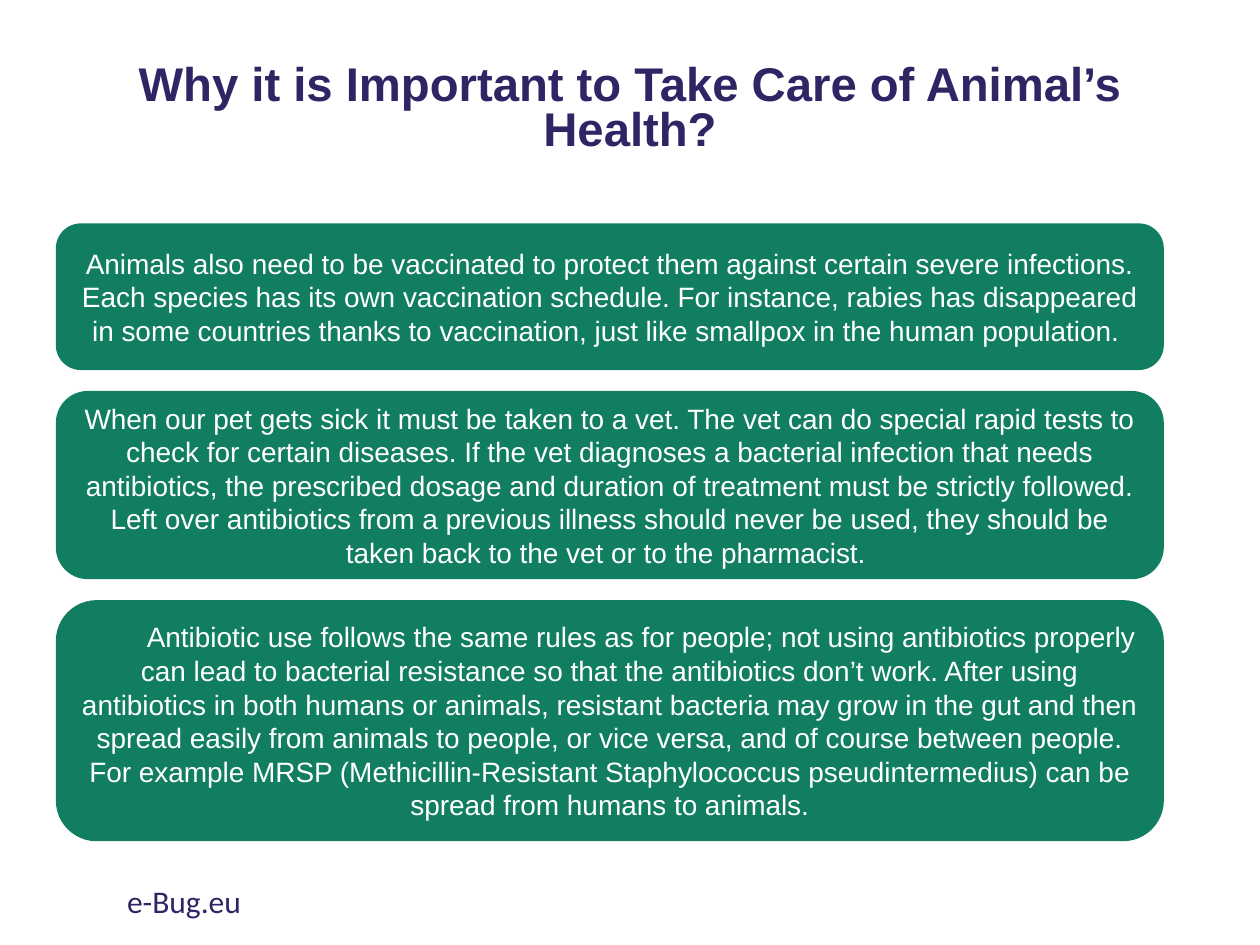
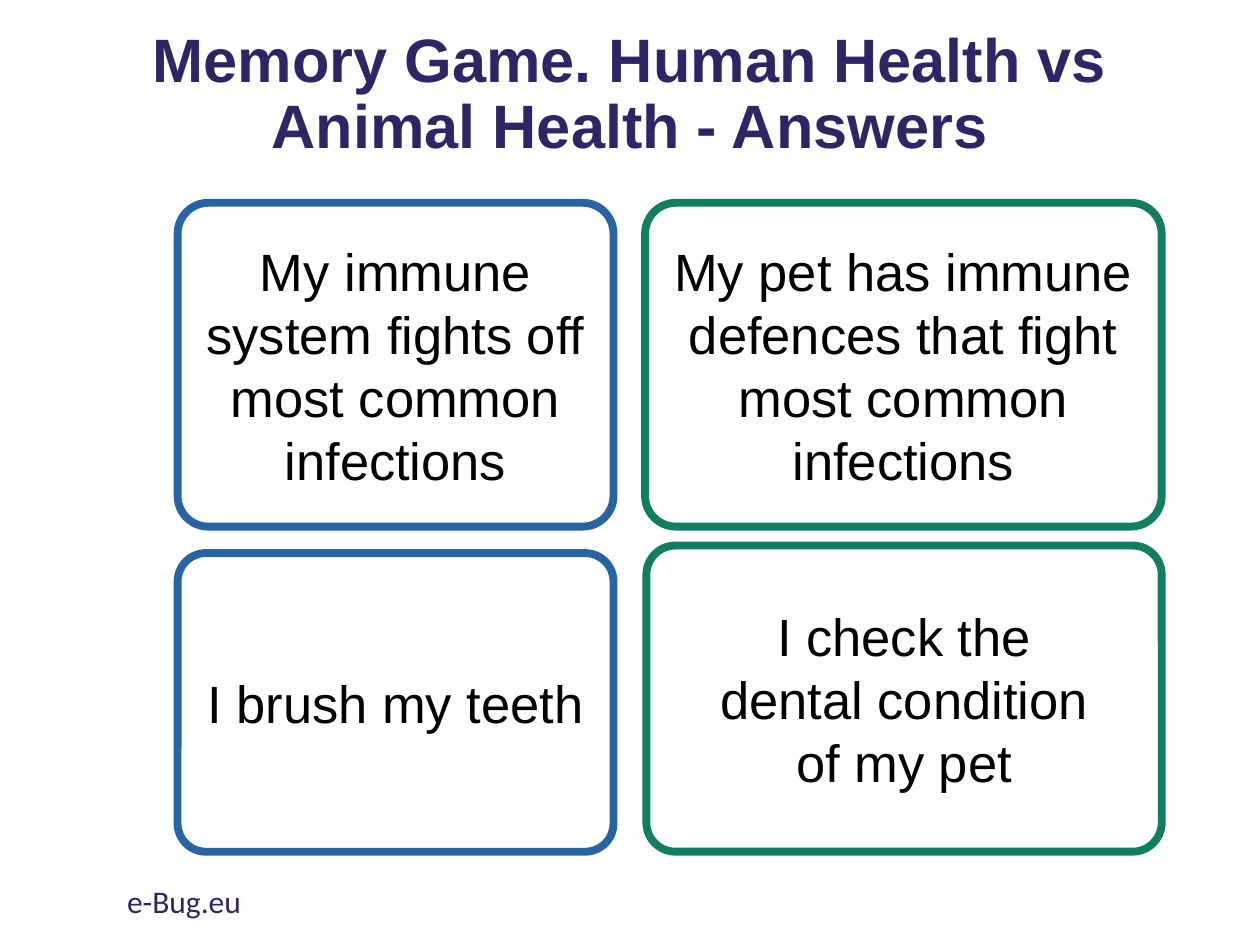
from pptx import Presentation
from pptx import util as u
from pptx.dml.color import RGBColor
from pptx.enum import shapes, text

NAVY = RGBColor(0x30, 0x25, 0x64)
GREEN = RGBColor(0x11, 0x7E, 0x62)
BLUE = RGBColor(0x28, 0x63, 0xA4)
WHITE = RGBColor(0xFF, 0xFF, 0xFF)
BLACK = RGBColor(0, 0, 0)
MID = text.MSO_ANCHOR.MIDDLE
TOP = text.MSO_ANCHOR.TOP
CENTER = text.PP_ALIGN.CENTER
LEFT = text.PP_ALIGN.LEFT

deck = Presentation()
deck.slide_width, deck.slide_height = u.Inches(10), u.Inches(7.5)
# The grid has 100 columns and 75 rows
COL, ROW = deck.slide_width / 100, deck.slide_height / 75


def place(x, y, w, h):
    return [int(v) for v in (x * COL, y * ROW, w * COL, h * ROW)]


def write(shape, words, size, ink, face="Arial", bold=False, align=CENTER,
          anchor=MID, space=None):
    frame = shape.text_frame
    frame.word_wrap = True
    frame.vertical_anchor = anchor
    frame.text = words
    for para in frame.paragraphs:
        para.alignment = align
        if space:
            para.line_spacing = space
        font = para.font
        font.name, font.size, font.bold = face, u.Pt(size), bold
        font.color.rgb = ink


# Title and footer of both slides
heads = [
    ("Why it is Important to Take Care of Animal’s Health?",
     (6.9, 4.2, 86.2, 9.1), 27, 0.8),
    ("Memory Game. Human Health vs Animal Health - Answers",
     (7, 3.6, 86, 8), 35, 0.9),
]
slides = []
for words, spot, size, space in heads:
    slide = deck.slides.add_slide(deck.slide_layouts[6])
    title = slide.shapes.add_textbox(*place(*spot))
    write(title, words, size, NAVY, bold=True, space=space)
    foot = slide.shapes.add_textbox(*place(9.1, 69.5, 33.8, 4))
    write(foot, "e-Bug.eu", 18, NAVY, "Calibri", align=LEFT, anchor=TOP)
    slides.append(slide)

# Slide 1: green bands stacked with equal gaps
bands = [
    (11.5, "Animals also need to be vaccinated to protect them against certain "
     "severe infections. Each species has its own vaccination schedule. For "
     "instance, rabies has disappeared in some countries thanks to "
     "vaccination, just like smallpox in the human population. "),
    (14.8, "When our pet gets sick it must be taken to a vet. The vet can do "
     "special rapid tests to check for certain diseases. If the vet diagnoses "
     "a bacterial infection that needs antibiotics, the prescribed dosage and "
     "duration of treatment must be strictly followed. Left over antibiotics "
     "from a previous illness should never be used, they should be taken back "
     "to the vet or to the pharmacist. "),
    (19, "\tAntibiotic use follows the same rules as for people; not using "
     "antibiotics properly can lead to bacterial resistance so that the "
     "antibiotics don’t work. After using antibiotics in both humans or "
     "animals, resistant bacteria may grow in the gut and then spread easily "
     "from animals to people, or vice versa, and of course between people. "
     "For example MRSP (Methicillin-Resistant Staphylococcus "
     "pseudintermedius) can be spread from humans to animals."),
]
GAP = 1.8
y = 17.8
for tall, words in bands:
    band = slides[0].shapes.add_shape(
        shapes.MSO_SHAPE.ROUNDED_RECTANGLE, *place(4.5, y, 87.8, tall))
    band.shadow.inherit = False
    band.fill.solid()
    band.fill.fore_color.rgb = GREEN
    band.line.color.rgb = GREEN
    band.line.width = u.Pt(1)
    write(band, words, 16, WHITE)
    y += tall + GAP

# Slide 2: pairs of cards, human on the left and pet on the right
cards = [
    ((14.1, 16.1, 34.6, 25.7), BLUE,
     "My immune system fights off most common infections"),
    ((51.2, 16.1, 41, 25.7), GREEN,
     "My pet has immune\ndefences that fight\nmost common\ninfections"),
    ((14.1, 43.9, 34.6, 23.7), BLUE, "I brush my teeth"),
    ((51.3, 43.3, 40.9, 24.3), GREEN,
     "I check the\ndental condition\nof my pet"),
]
for spot, edge, words in cards:
    card = slides[1].shapes.add_shape(
        shapes.MSO_SHAPE.ROUNDED_RECTANGLE, *place(*spot))
    card.adjustments[0] = 0.095
    card.shadow.inherit = False
    card.fill.background()
    card.line.color.rgb = edge
    card.line.width = u.Pt(4.5)
    write(card, words, 30, BLACK)

deck.save("out.pptx")
